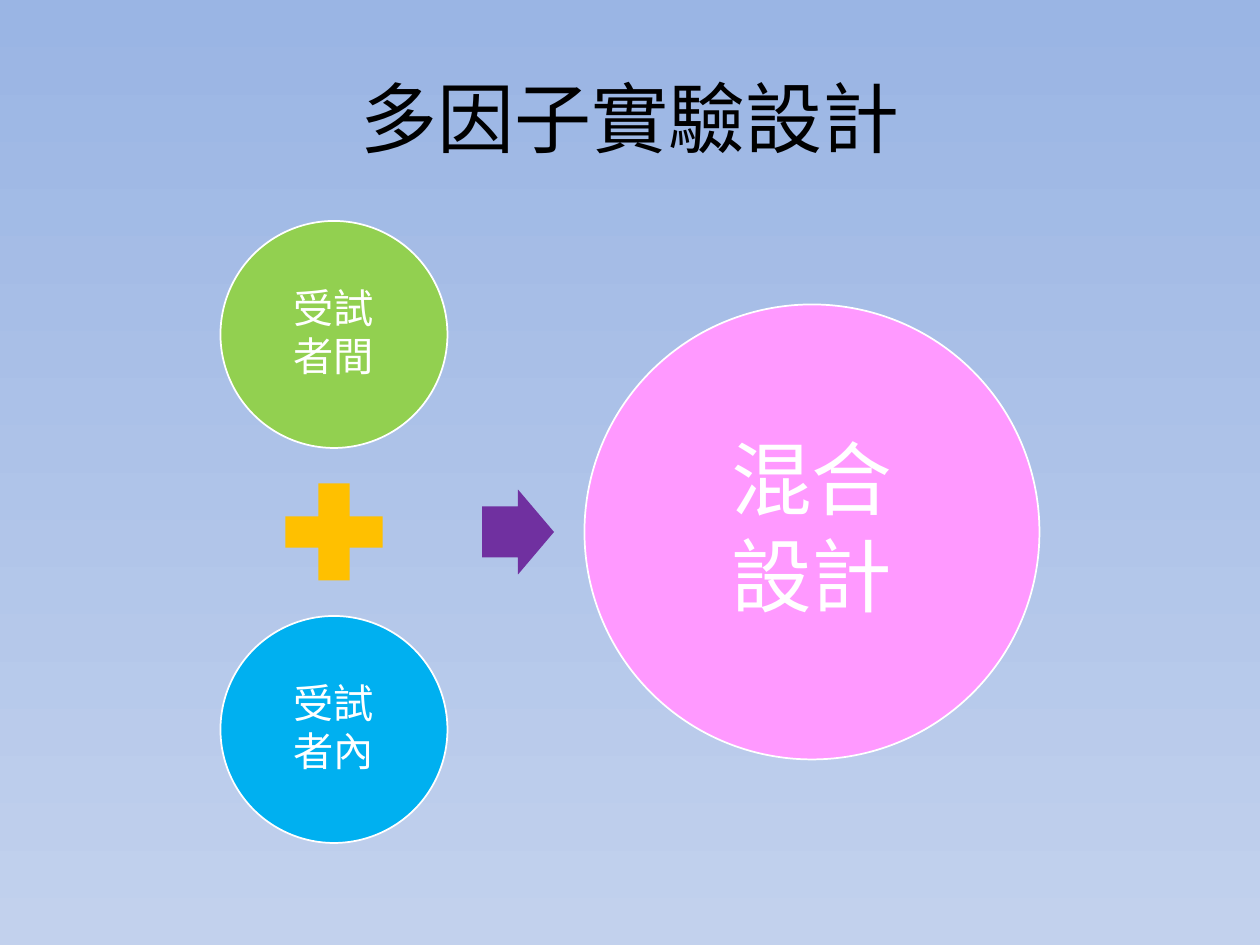
from lxml.etree import SubElement
from pptx import Presentation
from pptx.dml.color import RGBColor
from pptx.enum.shapes import MSO_SHAPE
from pptx.enum.text import MSO_ANCHOR, PP_ALIGN
from pptx.oxml.ns import qn
from pptx.util import Emu, Pt

PX = 914400 / 126
FONT = "Noto Sans CJK SC"

BLACK = RGBColor(0x00, 0x00, 0x00)
WHITE = RGBColor(0xFF, 0xFF, 0xFF)
GREEN = RGBColor(0x92, 0xD0, 0x50)
ORANGE = RGBColor(0xFF, 0xC0, 0x00)
BLUE = RGBColor(0x00, 0xB0, 0xF0)
PURPLE = RGBColor(0x70, 0x30, 0xA0)
PINK = RGBColor(0xFF, 0x99, 0xFF)
SKY_TOP = RGBColor(0x9A, 0xB5, 0xE4)
SKY_BOTTOM = RGBColor(0xC2, 0xD1, 0xED)

CENTER_Y = 532
STACK_X = 334
FACTOR_SIZE = 227
PLUS_SIZE = 132
STACK_GAP = 18


def px(value):
    return Emu(round(value * PX))


def box(left, top, width, height):
    return [px(value) for value in (left, top, width, height)]


def write_text(shape, lines, *, size, color, inset=0, line_spacing=1.0, space_after=0):
    frame = shape.text_frame
    frame.word_wrap = True
    frame.vertical_anchor = MSO_ANCHOR.MIDDLE
    frame.margin_left = frame.margin_right = px(inset)
    frame.margin_top = frame.margin_bottom = px(inset)
    for index, line in enumerate(lines):
        paragraph = frame.paragraphs[0] if index == 0 else frame.add_paragraph()
        paragraph.alignment = PP_ALIGN.CENTER
        paragraph.line_spacing = line_spacing
        paragraph.space_after = Pt(space_after)
        run = paragraph.add_run()
        run.text = line
        run.font.name = FONT
        run.font.size = Pt(size)
        run.font.color.rgb = color
        SubElement(run.font._element, qn("a:ea"), typeface=FONT)


def add_filled(slide, kind, center_x, center_y, width, height, color):
    """Add a borderless preset shape placed by its centre."""
    left, top = center_x - width / 2, center_y - height / 2
    shape = slide.shapes.add_shape(kind, *box(left, top, width, height))
    shape.shadow.inherit = False
    shape.fill.solid()
    shape.fill.fore_color.rgb = color
    shape.line.fill.background()
    return shape


def add_circle(slide, center_x, center_y, diameter, color, lines, **text_format):
    circle = add_filled(
        slide, MSO_SHAPE.OVAL, center_x, center_y, diameter, diameter, color
    )
    circle.line.color.rgb = WHITE
    circle.line.width = Pt(1)
    write_text(circle, lines, color=WHITE, line_spacing=0.9, **text_format)


def set_background(slide):
    fill = slide.background.fill
    fill.gradient()
    fill.gradient_angle = 270
    for stop, color in zip(fill.gradient_stops, (SKY_TOP, SKY_BOTTOM)):
        stop.color.rgb = color


def add_title(slide, text):
    title = slide.shapes.add_textbox(*box(63, 38, 1134, 157))
    write_text(title, [text], size=44, color=BLACK, inset=6)


def add_factors(slide):
    """Stack the two factors above and below the plus sign."""
    offset = PLUS_SIZE / 2 + STACK_GAP + FACTOR_SIZE / 2
    factors = (
        (-offset, GREEN, ["受試", "者間"]),
        (offset, BLUE, ["受試", "者內"]),
    )
    for shift, color, lines in factors:
        add_circle(slide, STACK_X, CENTER_Y + shift, FACTOR_SIZE, color, lines,
                   size=23, inset=4, space_after=3)
    add_filled(slide, MSO_SHAPE.MATH_PLUS, STACK_X, CENTER_Y,
               PLUS_SIZE, PLUS_SIZE, ORANGE)


def add_arrow(slide):
    arrow = add_filled(slide, MSO_SHAPE.RIGHT_ARROW, 518, CENTER_Y, 72, 85, PURPLE)
    arrow.adjustments[0] = 0.6
    arrow.adjustments[1] = 0.5


def main():
    presentation = Presentation()
    presentation.slide_width = px(1260)
    presentation.slide_height = px(945)
    slide = presentation.slides.add_slide(presentation.slide_layouts[6])
    set_background(slide)
    add_title(slide, "多因子實驗設計")
    add_factors(slide)
    add_arrow(slide)
    add_circle(slide, 812, CENTER_Y, 455, PINK, ["混合", "設計"],
               size=46, inset=8, space_after=6)
    presentation.save("out.pptx")


if __name__ == "__main__":
    main()
